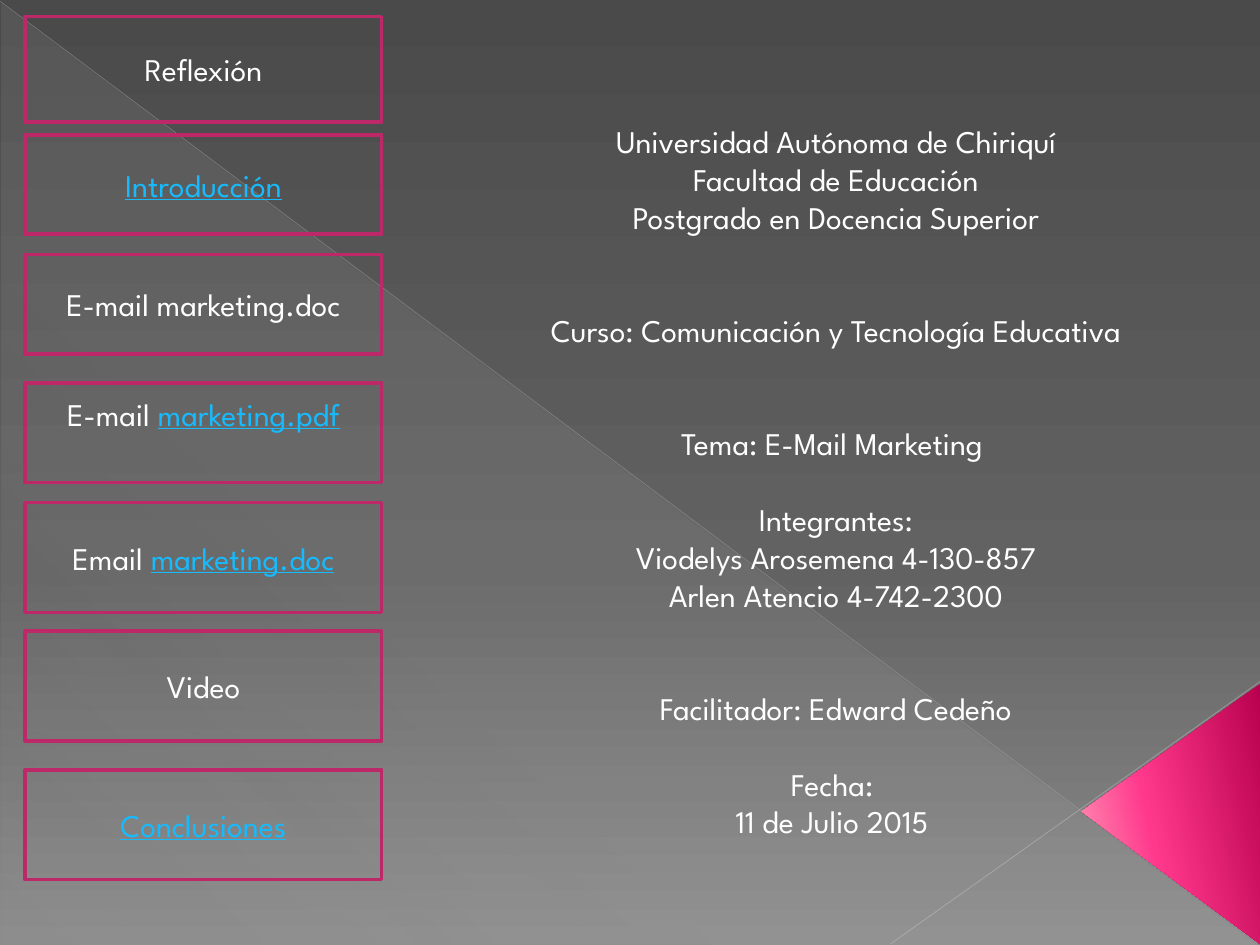
from lxml.etree import SubElement
from pptx import Presentation
from pptx.dml.color import RGBColor
from pptx.enum.shapes import MSO_CONNECTOR as CONN, MSO_SHAPE as SHAPE
from pptx.enum.text import MSO_ANCHOR as ANCHOR, MSO_AUTO_SIZE as AUTO, PP_ALIGN as ALIGN
from pptx.oxml.ns import qn
from pptx.util import Inches, Pt

WIDTH, HEIGHT = Inches(10), Inches(7.5)
FONT, SIZE, LINE_PITCH = "League Spartan", 18, 21.6
WHITE, LINK, PINK = "FFFFFF", "17BBFD", "BD2968"

MENU = [
    (1.73, 11.2, "Reflexión", ""),
    (14.27, 10.53, "", "Introducción"),
    (26.93, 10.53, "E-mail marketing.doc", ""),
    (40.53, 10.53, "E-mail ", "marketing.pdf"),
    (53.2, 11.6, "Email ", "marketing.doc"),
    (66.8, 11.6, "Video", ""),
    (81.47, 11.6, "", "Conclusiones"),
]
COVER = [
    (0, "Universidad Autónoma de Chiriquí"),
    (0, "Facultad de Educación"),
    (0, "Postgrado en Docencia Superior"),
    (2, "Curso: Comunicación y Tecnología Educativa"),
    (2, "Tema: E-Mail Marketing "),
    (1, "Integrantes:"),
    (0, "Viodelys Arosemena 4-130-857"),
    (0, "Arlen Atencio 4-742-2300"),
    (2, "Facilitador: Edward Cedeño"),
    (1, "Fecha: "),
    (0, "11 de Julio 2015 "),
]


def rgb(color):
    return RGBColor.from_string(color)


def share(*percents):
    return [round(v * (HEIGHT if i % 2 else WIDTH) / 100) for i, v in enumerate(percents)]


def add_color(parent, color, alpha=100):
    clr = SubElement(parent, qn("a:srgbClr"), val=color)
    if alpha < 100:
        SubElement(clr, qn("a:alpha"), val=str(alpha * 1000))


def set_gradient(fill, element, angle, stops):
    fill.gradient()
    grad = next(element.iter(qn("a:gradFill")))
    for child in list(grad):
        grad.remove(child)
    gs_list = SubElement(grad, qn("a:gsLst"))
    for pos, *color in stops:
        add_color(SubElement(gs_list, qn("a:gs"), pos=str(pos * 1000)), *color)
    SubElement(grad, qn("a:lin"), ang=str(angle * 60000), scaled="0")


def add_run(p, text, color=WHITE, underline=None):
    r = p.add_run()
    r.text = text
    r.font.name, r.font.size = FONT, Pt(SIZE)
    r.font.color.rgb = rgb(color)
    r.font.underline = underline


def add_shape(s, kind, box):
    sp = s.shapes.add_shape(kind, *share(*box))
    sp.shadow.inherit = False
    return sp


def add_facet(s, kind, box, angle, stops):
    sp = add_shape(s, kind, box)
    sp.line.fill.background()
    set_gradient(sp.fill, sp.element, angle, stops)
    return sp


def add_line(s, ends, color, width, alpha):
    line = s.shapes.add_connector(CONN.STRAIGHT, *share(*ends))
    line.line.width = Pt(width)
    line.line.color.rgb = rgb(color)
    clr = next(line.element.iter(qn("a:srgbClr")))
    SubElement(clr, qn("a:alpha"), val=str(alpha * 1000))
    SubElement(line.element.spPr, qn("a:effectLst"))


def add_button(s, top, height, plain, link):
    sp = add_shape(s, SHAPE.RECTANGLE, (2, top, 28.3, height))
    sp.fill.background()
    sp.line.color.rgb = rgb(PINK)
    sp.line.width = Pt(2)
    tf = sp.text_frame
    tf.word_wrap = True
    tf.vertical_anchor = ANCHOR.MIDDLE
    p = tf.paragraphs[0]
    p.alignment = ALIGN.CENTER
    if plain:
        add_run(p, plain)
    if link:
        add_run(p, link, color=LINK, underline=True)
    return sp


def add_cover(s, box, lines):
    tf = s.shapes.add_textbox(*share(*box)).text_frame
    tf.word_wrap = True
    tf.auto_size = AUTO.SHAPE_TO_FIT_TEXT
    for i, (gap, text) in enumerate(lines):
        p = tf.add_paragraph() if i else tf.paragraphs[0]
        p.alignment = ALIGN.CENTER
        p.space_before = Pt(gap * LINE_PITCH)
        add_run(p, text)


def add_backdrop(s):
    set_gradient(s.background.fill, s.element, 90,
                 [(0, "4A4A4A"), (60, "626262"), (100, "8C8C8C")])
    add_facet(s, SHAPE.RIGHT_TRIANGLE, (0.1, 0.27, 99.8, 99.73), 133,
              [(0, "D2D2D2", 10), (70, "D2D2D2", 8), (100, "D2D2D2", 1)])
    add_line(s, (0, 0.13, 99.9, 99.87), "BFBFBF", 0.39, 35)
    add_line(s, (100, 72.13, 70.7, 99.87), "C6C6C6", 0.47, 45)
    corner = add_facet(s, SHAPE.ISOSCELES_TRIANGLE, (82.6, 76.67, 20.7, 18.93), 258,
                       [(0, "B8014E"), (60, "FF388C"), (100, "FF9CB9")])
    corner.adjustments[0] = 0.51
    corner.rotation = 270


def main():
    prs = Presentation()
    prs.slide_width, prs.slide_height = WIDTH, HEIGHT
    s = prs.slides.add_slide(prs.slide_layouts[6])
    add_backdrop(s)
    buttons = [add_button(s, *item) for item in MENU]
    buttons[3].text_frame.margin_bottom = Inches(0.35)
    add_cover(s, (32.7, 12.27, 67.3, 78.13), COVER)
    prs.save("out.pptx")


if __name__ == "__main__":
    main()
